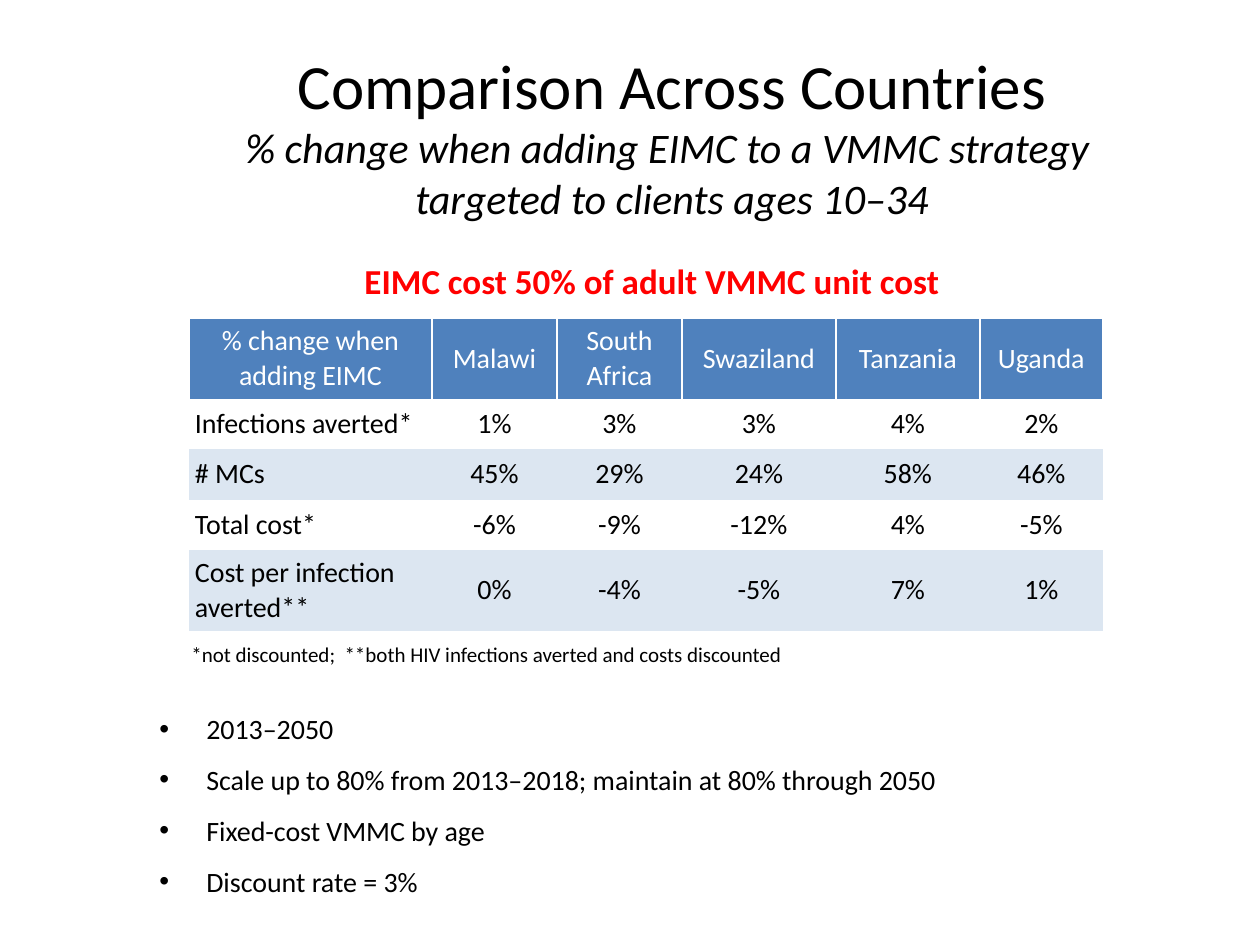
from lxml import etree
from pptx import Presentation
from pptx.dml.color import RGBColor
from pptx.enum.text import MSO_ANCHOR, PP_ALIGN
from pptx.oxml.ns import qn
from pptx.util import Pt

PX = 914400 / 126  # EMU per px
COLORS = {"text": "000000", "accent": "FF0000", "header": "4F81BD",
          "band": "DCE6F1", "white": "FFFFFF"}


def px(length):
    return round(length * PX)


def add_text(box, paragraphs, size, color="text", align=PP_ALIGN.LEFT):
    frame = slide.shapes.add_textbox(*map(px, box)).text_frame
    frame.word_wrap = True
    frame.text = "\n".join(paragraphs)
    for paragraph in frame.paragraphs:
        paragraph.alignment = align
        for run in paragraph.runs:
            run.font.name = "Calibri"
            run.font.size = Pt(size)
            run.font.color.rgb = RGBColor.from_string(COLORS[color])
    return frame


deck = Presentation()
deck.slide_width, deck.slide_height = px(1260), px(945)
slide = deck.slides.add_slide(deck.slide_layouts[6])

# Title with italic subtitle lines
title = add_text(
    (147, 38, 1050, 193),
    ["Comparison Across Countries\v% change when adding EIMC to a VMMC strategy "
     "\vtargeted to clients ages 10–34"], 36, align=PP_ALIGN.CENTER)
title.vertical_anchor = MSO_ANCHOR.MIDDLE
for subtitle in title.paragraphs[0].runs[1:]:
    subtitle.font.size = Pt(24)
    subtitle.font.italic = True

# Assumptions
assumptions = add_text(
    (147, 693, 1018, 220),
    ["2013–2050",
     "Scale up to 80% from 2013–2018; maintain at 80% through 2050",
     "Fixed-cost VMMC by age",
     "Discount rate = 3%"], 16)
for index, assumption in enumerate(assumptions.paragraphs):
    assumption.line_spacing = 1.2
    assumption.space_before = Pt(6 if index else 0)
    properties = assumption._p.get_or_add_pPr()
    properties.set("marL", str(px(47)))
    properties.set("indent", str(px(-47)))
    etree.SubElement(properties, qn("a:buFont")).set("typeface", "Arial")
    etree.SubElement(properties, qn("a:buChar")).set("char", "•")
assumptions.margin_top = px(12)

# Country comparison table
comparison = [
    ["% change when adding EIMC", "Malawi", "South Africa", "Swaziland", "Tanzania", "Uganda"],
    ["Infections averted*", "1%", "3%", "3%", "4%", "2%"],
    ["# MCs", "45%", "29%", "24%", "58%", "46%"],
    ["Total cost*", "-6%", "-9%", "-12%", "4%", "-5%"],
    ["Cost per infection averted**", "0%", "-4%", "-5%", "7%", "1%"],
]
widths = [243, 125, 125, 154, 144, 123]
heights = [81, 50, 51, 50, 81]
table = slide.shapes.add_table(
    len(heights), len(widths), px(189), px(318), px(sum(widths)), px(sum(heights))).table
for column, width in zip(table.columns, widths):
    column.width = px(width)
for row, height in zip(table.rows, heights):
    row.height = px(height)

for r, values in enumerate(comparison):
    for c, value in enumerate(values):
        cell = table.cell(r, c)
        cell.text_frame.text = value
        cell.vertical_anchor = MSO_ANCHOR.MIDDLE
        cell.margin_left = cell.margin_right = px(6)
        cell.margin_top = cell.margin_bottom = px(6)
        entry = cell.text_frame.paragraphs[0]
        entry.alignment = PP_ALIGN.LEFT if r and not c else PP_ALIGN.CENTER
        font = entry.runs[0].font
        font.name, font.size, font.bold = "Calibri", Pt(16), False
        font.color.rgb = RGBColor.from_string(COLORS["text" if r else "white"])

        # White separators in the header, no lines in the body
        cell_properties = cell._tc.get_or_add_tcPr()
        for side in ("lnL", "lnR", "lnT", "lnB"):
            border = etree.SubElement(cell_properties, qn(f"a:{side}"), w=str(Pt(1)))
            if r == 0 and side != "lnB":
                line_fill = etree.SubElement(border, qn("a:solidFill"))
                etree.SubElement(line_fill, qn("a:srgbClr"), val=COLORS["white"])
            else:
                etree.SubElement(border, qn("a:noFill"))

        if r % 2:
            cell.fill.background()
        else:
            cell.fill.solid()
            cell.fill.fore_color.rgb = RGBColor.from_string(COLORS["band" if r else "header"])

# Footnote
add_text((179, 635, 788, 42),
         ["*not discounted;  **both HIV infections averted and costs discounted"], 12)

# Table heading
heading = add_text((262, 253, 788, 55), ["EIMC cost 50% of adult VMMC unit cost "],
                   20, "accent", PP_ALIGN.CENTER)
heading.paragraphs[0].runs[0].font.bold = True

deck.save("out.pptx")
